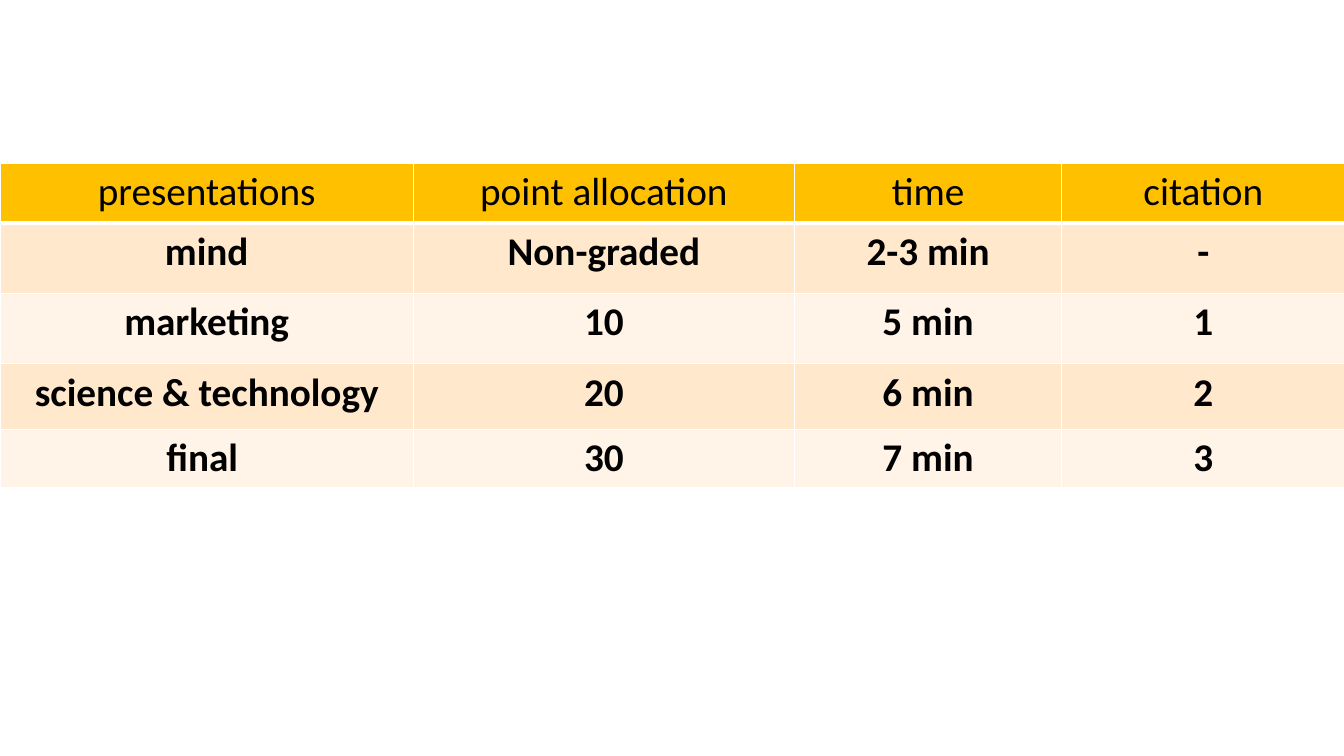
from dataclasses import dataclass

from lxml import etree
from pptx import Presentation
from pptx.dml.color import RGBColor
from pptx.enum import text
from pptx.oxml import ns
from pptx.util import Inches, Pt


@dataclass(frozen=True)
class Theme:
    font: str = "Calibri"
    size: int = 28
    ink: str = "000000"
    header: str = "FFC000"
    bands: tuple = ("FFE8CC", "FFF4E7")
    rule: str = "FFFFFF"
    thin: float = 1
    thick: float = 3


THEME = Theme()

SCHEDULE = [
    ("presentations", "point allocation", "time", "citation"),
    ("mind", "Non-graded", "2-3 min", "-"),
    ("marketing", "10", "5 min", "1"),
    ("science & technology", "20", "6 min", "2"),
    ("final ", "30", "7 min", "3"),
]
COLUMN_WIDTHS = (4.1, 3.78, 2.65, 2.81)
ROW_HEIGHTS = (0.59, 0.7, 0.7, 0.65, 0.57)


def apply_format(target, values):
    for name, value in values.items():
        setattr(target, name, value)


def add_borders(cell, row_number):
    weights = {
        "L": THEME.thin,
        "R": THEME.thin,
        "T": THEME.thick if row_number == 1 else THEME.thin,
        "B": THEME.thick if row_number == 0 else THEME.thin,
    }
    properties = cell._tc.get_or_add_tcPr()
    for side, weight in weights.items():
        edge = etree.SubElement(properties, ns.qn(f"a:ln{side}"), w=str(Pt(weight)))
        paint = etree.SubElement(edge, ns.qn("a:solidFill"))
        etree.SubElement(paint, ns.qn("a:srgbClr"), val=THEME.rule)


def fill_cell(cell, wording, row_number):
    is_header = row_number == 0
    add_borders(cell, row_number)
    cell.fill.solid()
    background = THEME.header if is_header else THEME.bands[(row_number - 1) % 2]
    cell.fill.fore_color.rgb = RGBColor.from_string(background)
    line = cell.text_frame.paragraphs[0]
    line.alignment = text.PP_ALIGN.CENTER
    words = line.add_run()
    words.text = wording
    apply_format(words.font, {
        "name": THEME.font,
        "size": Pt(THEME.size),
        "bold": not is_header,
    })
    words.font.color.rgb = RGBColor.from_string(THEME.ink)


def add_schedule(slide):
    schedule = slide.shapes.add_table(
        len(SCHEDULE), len(COLUMN_WIDTHS), Inches(0), Inches(1.62),
        Inches(sum(COLUMN_WIDTHS)), Inches(sum(ROW_HEIGHTS)),
    ).table
    for column, width in zip(schedule.columns, COLUMN_WIDTHS):
        column.width = Inches(width)
    for row, height in zip(schedule.rows, ROW_HEIGHTS):
        row.height = Inches(height)
    for row_number, entries in enumerate(SCHEDULE):
        for column_number, wording in enumerate(entries):
            fill_cell(schedule.cell(row_number, column_number), wording, row_number)


def main():
    deck = Presentation()
    apply_format(deck, {"slide_width": Inches(13.33), "slide_height": Inches(7.5)})
    slide = deck.slides.add_slide(deck.slide_layouts[6])
    add_schedule(slide)
    deck.save("out.pptx")


if __name__ == "__main__":
    main()
